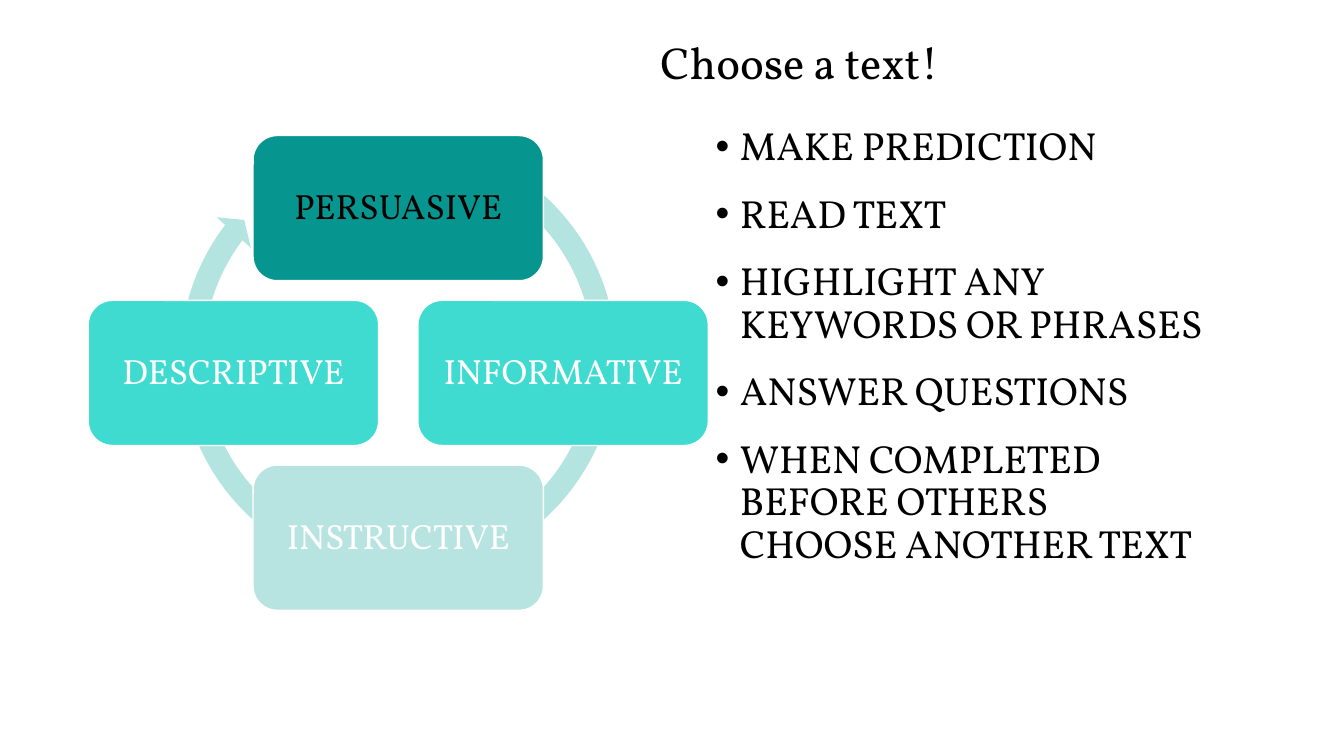
from lxml import etree
from pptx import Presentation
from pptx.dml.color import RGBColor
from pptx.enum.shapes import MSO_SHAPE
from pptx.enum.text import MSO_ANCHOR, MSO_AUTO_SIZE, PP_ALIGN
from pptx.oxml.ns import qn
from pptx.util import Inches, Pt

ROUNDED = MSO_SHAPE.ROUNDED_RECTANGLE
CIRCULAR_ARROW = MSO_SHAPE.CIRCULAR_ARROW
LEFT, CENTER = PP_ALIGN.LEFT, PP_ALIGN.CENTER
MIDDLE, BOTTOM = MSO_ANCHOR.MIDDLE, MSO_ANCHOR.BOTTOM

# Content
TITLE = "Choose a text!"
STEPS = [
    "MAKE PREDICTION",
    "READ TEXT",
    "HIGHLIGHT ANY KEYWORDS OR PHRASES",
    "ANSWER QUESTIONS",
    "WHEN COMPLETED BEFORE OTHERS CHOOSE ANOTHER TEXT",
]
# Text type, column and row offset from the cycle's centre, fill, text colour
TEXT_TYPES = [
    ("PERSUASIVE", 0, -1, "teal", "black"),
    ("INFORMATIVE", 1, 0, "turquoise", "white"),
    ("INSTRUCTIVE", 0, 1, "pale", "white"),
    ("DESCRIPTIVE", -1, 0, "turquoise", "white"),
]
COLOURS = {
    "black": "000000", "white": "FFFFFF", "teal": "06958F",
    "turquoise": "3FDBD1", "pale": "B7E4E0", "arrow": "B4E4E0",
}
FONT = "Vollkorn"

# Layout in inches
CENTRE_X, CENTRE_Y = 3.95, 3.7
BOX_WIDTH, BOX_HEIGHT = 2.88, 1.44
BOX_STEP = 1.635
ARROW_SIZE = 4.55
ARROW_TOP = 1.27
ARROW_ADJUSTMENTS = [0.05, 2.73, 130.31, 178.96, 0.05]
BULLET_INDENT = Inches(0.24)


def colour(name):
    return RGBColor.from_string(COLOURS[name])


def add_text(paragraph, text, size, colour_name, align):
    paragraph.alignment = align
    paragraph.line_spacing = 0.9
    run = paragraph.add_run()
    run.text = text
    run.font.name = FONT
    run.font.size = Pt(size)
    run.font.color.rgb = colour(colour_name)


def add_bullet(paragraph):
    properties = paragraph._p.get_or_add_pPr()
    properties.set("marL", str(BULLET_INDENT))
    properties.set("indent", str(-BULLET_INDENT))
    etree.SubElement(properties, qn("a:buFont")).set("typeface", "Arial")
    etree.SubElement(properties, qn("a:buChar")).set("char", "•")


def add_filled_shape(slide, kind, left, top, width, height, fill):
    shape = slide.shapes.add_shape(
        kind, Inches(left), Inches(top), Inches(width), Inches(height))
    shape.shadow.inherit = False
    shape.fill.solid()
    shape.fill.fore_color.rgb = colour(fill)
    return shape


def add_title(slide):
    title = slide.shapes.title
    title.left, title.top = Inches(6.45), Inches(-0.01)
    title.width, title.height = Inches(6.13), Inches(0.94)
    frame = title.text_frame
    frame.word_wrap = True
    frame.auto_size = MSO_AUTO_SIZE.NONE
    frame.vertical_anchor = BOTTOM
    add_text(frame.paragraphs[0], TITLE, 32, "black", LEFT)


def add_steps(slide):
    box = slide.shapes.add_textbox(
        Inches(7), Inches(1.21), Inches(5.08), Inches(4.58))
    frame = box.text_frame
    frame.word_wrap = True
    for index, step in enumerate(STEPS):
        paragraph = frame.add_paragraph() if index else frame.paragraphs[0]
        add_bullet(paragraph)
        add_text(paragraph, step, 28, "black", LEFT)
        if index:
            paragraph.space_before = Pt(18)


def add_cycle(slide):
    # Ring arrow behind the boxes
    arrow = add_filled_shape(slide, CIRCULAR_ARROW, CENTRE_X - ARROW_SIZE / 2,
                             ARROW_TOP, ARROW_SIZE, ARROW_SIZE, "arrow")
    arrow.line.fill.background()
    for index, value in enumerate(ARROW_ADJUSTMENTS):
        arrow.adjustments[index] = value

    # One box for each text type
    for label, column, row, fill, text_colour in TEXT_TYPES:
        left = CENTRE_X + column * BOX_STEP - BOX_WIDTH / 2
        top = CENTRE_Y + row * BOX_STEP - BOX_HEIGHT / 2
        box = add_filled_shape(slide, ROUNDED, left, top,
                               BOX_WIDTH, BOX_HEIGHT, fill)
        box.line.color.rgb = colour("white")
        box.line.width = Pt(1)
        frame = box.text_frame
        frame.word_wrap = True
        frame.vertical_anchor = MIDDLE
        add_text(frame.paragraphs[0], label, 25, text_colour, CENTER)


def main():
    presentation = Presentation()
    presentation.slide_width = Inches(13.33)
    presentation.slide_height = Inches(7.5)
    slide = presentation.slides.add_slide(presentation.slide_layouts[5])
    add_title(slide)
    add_steps(slide)
    add_cycle(slide)
    presentation.save("out.pptx")


if __name__ == "__main__":
    main()
